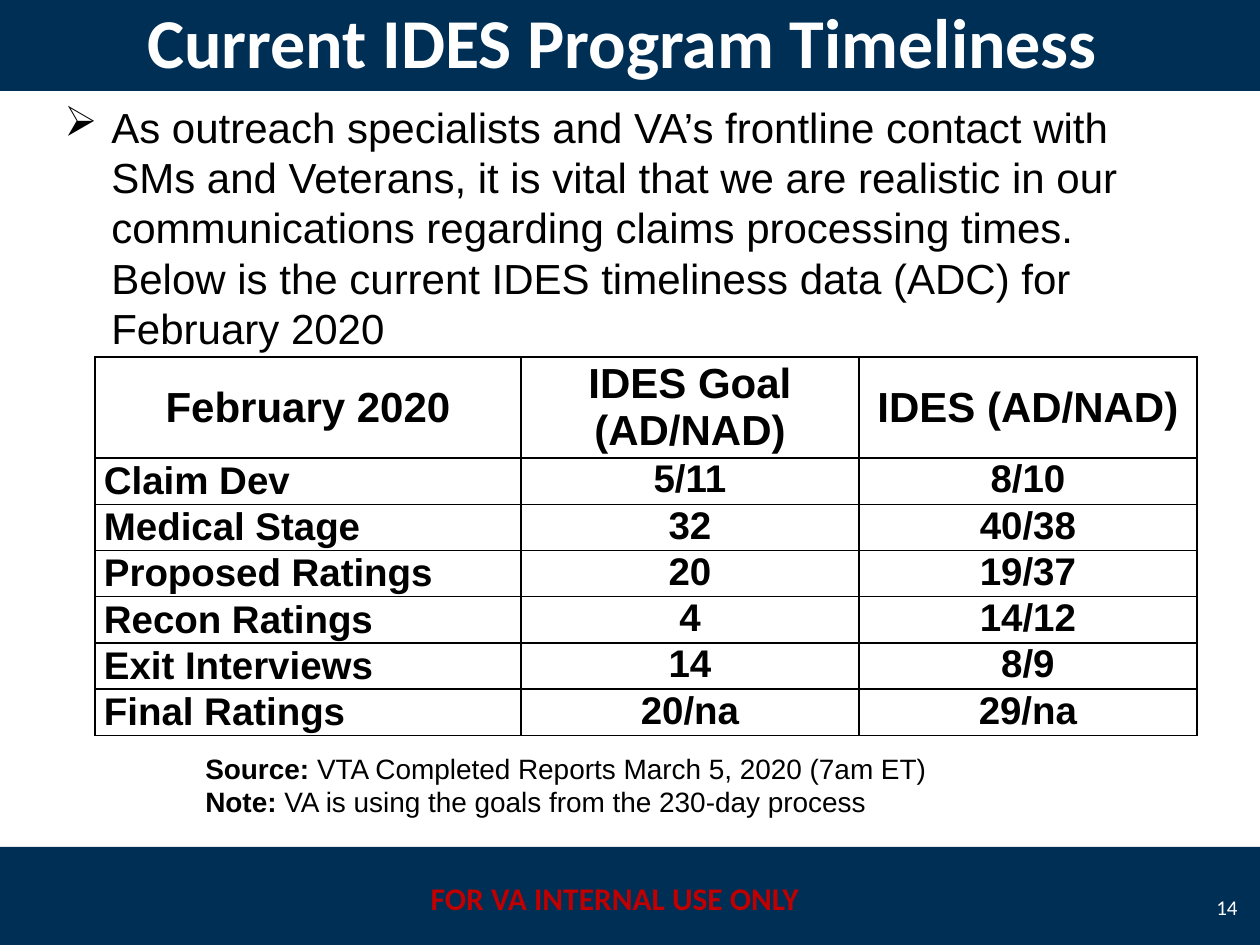
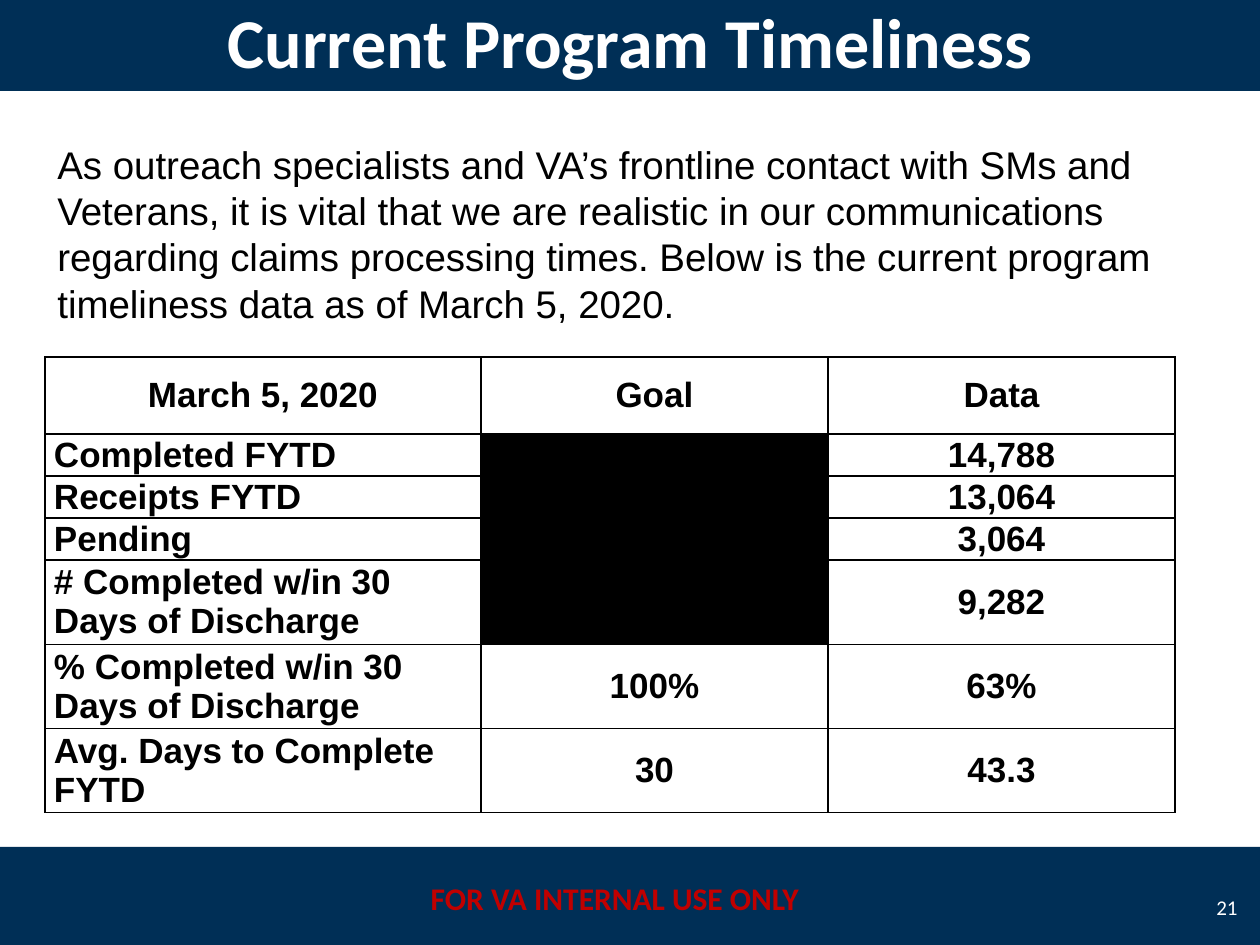
from lxml import etree
from pptx import Presentation
from pptx import util as u
from pptx.dml.color import RGBColor
from pptx.enum import shapes, text
from pptx.oxml import ns

PX = 914400 / 126
COLORS = {"navy": "002F56", "white": "FFFFFF", "red": "C00000", "black": "000000"}
LEFT, CENTER, RIGHT = text.PP_ALIGN.LEFT, text.PP_ALIGN.CENTER, text.PP_ALIGN.RIGHT
TOP, MIDDLE = text.MSO_ANCHOR.TOP, text.MSO_ANCHOR.MIDDLE
BLACKED_OUT = None


def px(length):
    """Turn px into EMU."""
    return u.Emu(round(length * PX))


def color(name):
    """Look up a named colour."""
    return RGBColor.from_string(COLORS[name])


def style_run(run, size, font="Arial", ink="black", bold=False):
    """Format one run of text."""
    run.font.size = u.Pt(size)
    run.font.name = font
    run.font.bold = bold
    run.font.color.rgb = color(ink)


def add_band(slide, top):
    """Draw a full-width navy band."""
    band = slide.shapes.add_shape(
        shapes.MSO_SHAPE.RECTANGLE, 0, px(top), px(1260), px(101))
    band.shadow.inherit = False
    band.fill.solid()
    band.fill.fore_color.rgb = color("navy")
    band.line.fill.background()


def add_text(slide, box, lines, size, align=LEFT, anchor=TOP, **style):
    """Add a wrapped text box with one paragraph per line and return its frame."""
    frame = slide.shapes.add_textbox(*map(px, box)).text_frame
    frame.word_wrap = True
    frame.vertical_anchor = anchor
    frame.text = "\n".join(lines)
    for paragraph in frame.paragraphs:
        paragraph.alignment = align
        for run in paragraph.runs:
            style_run(run, size, **style)
    return frame


def indent(paragraph, margin, first=0):
    """Set the left margin and first-line indent of a paragraph."""
    properties = paragraph._p.get_or_add_pPr()
    properties.set("marL", str(px(margin)))
    properties.set("indent", str(px(first)))
    return properties


def add_bullet(paragraph, mark, hang):
    """Give a paragraph a hanging bullet."""
    properties = indent(paragraph, hang, -hang)
    etree.SubElement(properties, ns.qn("a:buChar")).set("char", mark)


def add_labelled_notes(slide, box, notes, size, margin):
    """Add lines that each open with a bold label."""
    frame = add_text(slide, box, [f"{label}:" for label, _ in notes], size, bold=True)
    for paragraph, (_, note) in zip(frame.paragraphs, notes):
        indent(paragraph, margin)
        run = paragraph.add_run()
        run.text = f" {note}"
        style_run(run, size)


def set_borders(cell):
    """Rule all four sides of a cell in black."""
    properties = cell._tc.get_or_add_tcPr()
    for position, side in enumerate(("lnL", "lnR", "lnT", "lnB")):
        line = etree.Element(ns.qn(f"a:{side}"), w=str(u.Pt(1)))
        fill = etree.SubElement(line, ns.qn("a:solidFill"))
        etree.SubElement(fill, ns.qn("a:srgbClr"), val=COLORS["black"])
        properties.insert(position, line)


def fill_cell(cell, value, size, align, anchor):
    """Write and format one table cell."""
    cell.margin_left = cell.margin_right = px(9)
    cell.margin_top = cell.margin_bottom = 0
    cell.vertical_anchor = anchor
    cell.fill.solid()
    cell.fill.fore_color.rgb = color("black" if value is BLACKED_OUT else "white")
    set_borders(cell)
    if value is not BLACKED_OUT:
        cell.text = value
        paragraph = cell.text_frame.paragraphs[0]
        paragraph.alignment = align
        style_run(paragraph.runs[0], size, bold=True)


def add_timeliness_table(slide, left, top, widths, heights, rows, sizes, figure_anchor):
    """Add a table with centred headings, row labels and centred figures."""
    head_size, body_size = sizes
    table = slide.shapes.add_table(
        len(rows), len(widths), px(left), px(top), px(sum(widths)), px(sum(heights))).table
    table.first_row = table.horz_banding = False
    for column, width in zip(table.columns, widths):
        column.width = px(width)
    for r, (values, height) in enumerate(zip(rows, heights)):
        table.rows[r].height = px(height)
        for c, value in enumerate(values):
            heading, label = r == 0, c == 0
            fill_cell(table.cell(r, c), value, head_size if heading else body_size,
                      LEFT if label and not heading else CENTER,
                      MIDDLE if heading or label else figure_anchor)


def add_page(deck, title, number):
    """Add a slide with the shared bands, title, marking and number."""
    slide = deck.slides.add_slide(deck.slide_layouts[6])
    for top in (847, -10):
        add_band(slide, top)
    add_text(slide, (410, 873, 410, 50), ["FOR VA INTERNAL USE ONLY"], 18, CENTER,
             font="Calibri", ink="red", bold=True)
    add_text(slide, (1197, 882, 53, 50), [number], 12, RIGHT, MIDDLE,
             font="Calibri", ink="white")
    add_text(slide, (0, -10, 1260, 101), [title], 40, CENTER, MIDDLE,
             font="Calibri", ink="white", bold=True)
    return slide


def add_ides_slide(deck):
    """Build the IDES timeliness slide."""
    slide = add_page(deck, "Current IDES Program Timeliness ", "14")
    intro = add_text(slide, (52, 95, 1155, 267), [
        "As outreach specialists and VA’s frontline contact with SMs and Veterans, "
        "it is vital that we are realistic in our communications regarding claims "
        "processing times. Below is the current IDES timeliness data (ADC) for "
        "February 2020"], 24)
    add_bullet(intro.paragraphs[0], "➢", 47)
    add_timeliness_table(slide, 95, 357, [426, 338, 338], [101] + [46] * 6, [
        ("February 2020", "IDES Goal (AD/NAD)", "IDES (AD/NAD)"),
        ("Claim Dev", "5/11", "8/10"),
        ("Medical Stage", "32", "40/38"),
        ("Proposed Ratings", "20", "19/37"),
        ("Recon Ratings", "4", "14/12"),
        ("Exit Interviews", "14", "8/9"),
        ("Final Ratings", "20/na", "29/na"),
    ], (24, 22), TOP)
    add_labelled_notes(slide, (52, 745, 1061, 81), [
        ("Source", "VTA Completed Reports March 5, 2020 (7am ET)"),
        ("Note", "VA is using the goals from the 230-day process"),
    ], 16, 141)


def add_program_slide(deck):
    """Build the overall program timeliness slide."""
    slide = add_page(deck, "Current Program Timeliness", "21")
    add_text(slide, (45, 135, 1197, 199), [
        "As outreach specialists and VA’s frontline contact with SMs and",
        "Veterans, it is vital that we are realistic in our communications regarding "
        "claims processing times. Below is the current program timeliness data as of "
        "March 5, 2020."], 22)
    add_timeliness_table(slide, 45, 357, [436, 347, 347], [77] + [42] * 3 + [84] * 3, [
        ("March 5, 2020", "Goal", "Data"),
        ("Completed FYTD", BLACKED_OUT, "14,788"),
        ("Receipts FYTD", BLACKED_OUT, "13,064"),
        ("Pending", BLACKED_OUT, "3,064"),
        ("# Completed w/in 30 Days of Discharge", BLACKED_OUT, "9,282"),
        ("% Completed w/in 30 Days of Discharge", "100%", "63%"),
        ("Avg. Days to Complete FYTD", "30", "43.3"),
    ], (20, 20), MIDDLE)


def main():
    """Build and save the deck."""
    deck = Presentation()
    deck.slide_width, deck.slide_height = px(1260), px(945)
    add_ides_slide(deck)
    add_program_slide(deck)
    deck.save("out.pptx")


if __name__ == "__main__":
    main()
